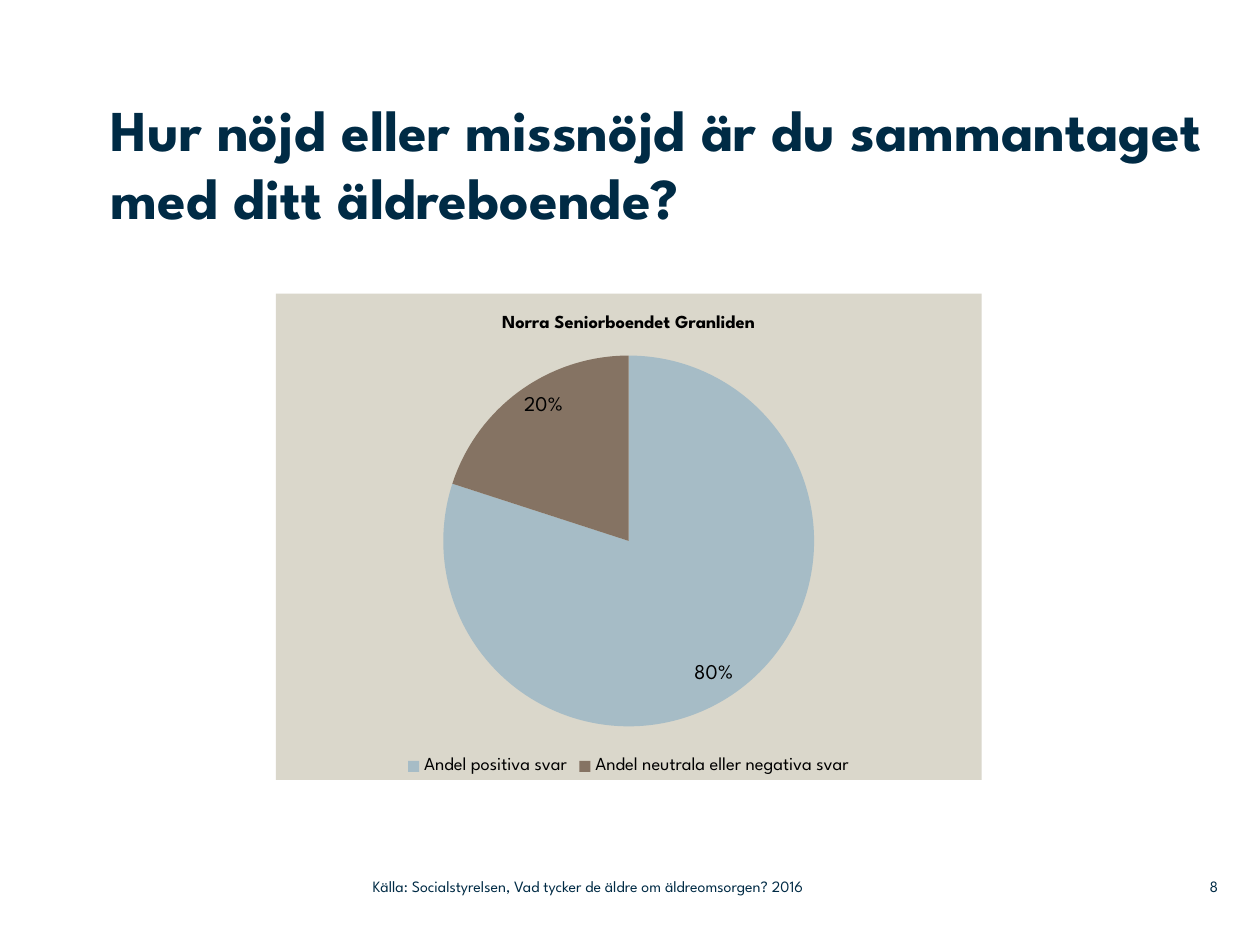
from pptx import Presentation
from pptx.chart.data import CategoryChartData
from pptx.dml.color import RGBColor
from pptx.enum.chart import XL_CHART_TYPE, XL_LABEL_POSITION, XL_LEGEND_POSITION
from pptx.enum.text import MSO_ANCHOR, PP_ALIGN
from pptx.oxml import parse_xml
from pptx.oxml.ns import nsdecls
from pptx.util import Pt

# Content
HEADING = "Hur nöjd eller missnöjd är du sammantaget med ditt äldreboende?"
CHART_TITLE = "Norra Seniorboendet Granliden"
ANSWERS = [  # category, share, colour
    ("Andel positiva svar", 80, "A6BCC6"),
    ("Andel neutrala eller negativa svar", 20, "857363"),
]
FOOTER = [  # text, left, width, alignment
    ("Källa: Socialstyrelsen, Vad tycker de äldre om äldreomsorgen? 2016",
     213, 319, PP_ALIGN.LEFT),
    ("8", 662.4, 33.8, PP_ALIGN.RIGHT),
]
FOOTER_TOP, FOOTER_HEIGHT = 496, 21
FONT, NAVY, BLACK, SAND = "League Spartan", "002B45", "000000", "DAD7CB"


def rgb(hex_colour):
    return RGBColor.from_string(hex_colour)


def set_font(font, size, colour, bold=False):
    font.name, font.size, font.bold = FONT, Pt(size), bold
    font.color.rgb = rgb(colour)


def prepare_frame(frame, anchor):
    frame.word_wrap = True
    frame.vertical_anchor = anchor
    frame.margin_left = frame.margin_right = frame.margin_top = frame.margin_bottom = 0


def fill_solid(fill, colour):
    fill.solid()
    fill.fore_color.rgb = rgb(colour)


prs = Presentation()
prs.slide_width, prs.slide_height = Pt(720), Pt(540)
slide = prs.slides.add_slide(prs.slide_layouts[5])

# Title
title = slide.shapes.title
title.left, title.top, title.width, title.height = Pt(63.4), Pt(54), Pt(635.8), Pt(102)
prepare_frame(title.text_frame, MSO_ANCHOR.TOP)
title.text_frame.text = HEADING
heading = title.text_frame.paragraphs[0]
heading.alignment = PP_ALIGN.LEFT
heading.line_spacing = Pt(39)
set_font(heading.font, 33, NAVY, bold=True)

# Pie chart
pie_data = CategoryChartData()
pie_data.categories = [answer for answer, _, _ in ANSWERS]
pie_data.add_series("Andel", [share for _, share, _ in ANSWERS])
chart = slide.shapes.add_chart(
    XL_CHART_TYPE.PIE, Pt(157.7), Pt(167.8), Pt(403.2), Pt(277.9), pie_data).chart
set_font(chart.font, 18, BLACK)
chart.has_title = True
chart.chart_title.text_frame.text = CHART_TITLE
set_font(chart.chart_title.text_frame.paragraphs[0].font, 10.5, BLACK, bold=True)
chart.chart_title.include_in_layout = False
chart.has_legend = True
chart.legend.position = XL_LEGEND_POSITION.BOTTOM
chart.legend.include_in_layout = False
set_font(chart.legend.font, 10.5, BLACK)

plot = chart.plots[0]
plot.vary_by_categories = True
for index, (_, _, colour) in enumerate(ANSWERS):
    slice_format = plot.series[0].points[index].format
    fill_solid(slice_format.fill, colour)
    slice_format.line.fill.background()
plot.has_data_labels = True
labels = plot.data_labels
labels.show_percentage, labels.show_value = True, False
labels.number_format, labels.number_format_is_linked = "0%", False
labels.position = XL_LABEL_POSITION.INSIDE_END
set_font(labels.font, 12, BLACK)

# Chart background, placed right after the plot area
chart_space = chart.element
chart_space.chart.addnext(parse_xml(
    f'<c:spPr {nsdecls("c", "a")}><a:solidFill><a:srgbClr val="{SAND}"/></a:solidFill>'
    "<a:ln><a:noFill/></a:ln></c:spPr>"))

# Footer: source and page number
for text, left, width, alignment in FOOTER:
    box = slide.shapes.add_textbox(Pt(left), Pt(FOOTER_TOP), Pt(width), Pt(FOOTER_HEIGHT))
    prepare_frame(box.text_frame, MSO_ANCHOR.MIDDLE)
    box.text_frame.text = text
    line = box.text_frame.paragraphs[0]
    line.alignment = alignment
    set_font(line.font, 9, NAVY)

prs.save("out.pptx")
